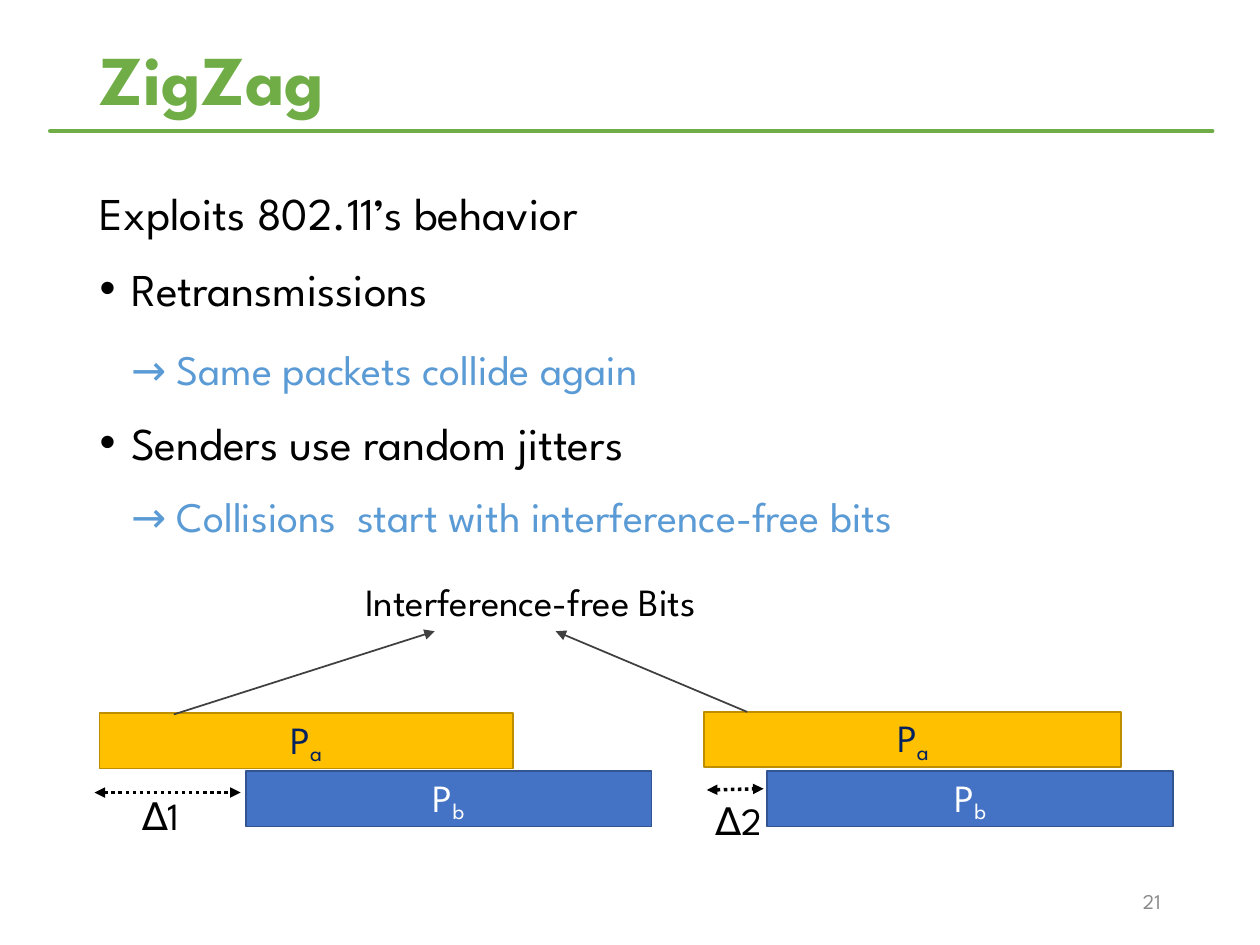
from pptx import Presentation
from pptx.dml.color import RGBColor
from pptx.enum.dml import MSO_LINE
from pptx.enum.shapes import MSO_CONNECTOR, MSO_SHAPE
from pptx.enum.text import MSO_ANCHOR, MSO_AUTO_SIZE, PP_ALIGN
from pptx.oxml.ns import qn
from pptx.util import Inches, Pt
from lxml import etree

STRAIGHT = MSO_CONNECTOR.STRAIGHT
RECTANGLE = MSO_SHAPE.RECTANGLE
DOTTED = MSO_LINE.ROUND_DOT
MIDDLE = MSO_ANCHOR.MIDDLE
TOP = MSO_ANCHOR.TOP
NO_FIT = MSO_AUTO_SIZE.NONE
LEFT, CENTER, RIGHT = PP_ALIGN.LEFT, PP_ALIGN.CENTER, PP_ALIGN.RIGHT

GREEN, SKY, BLACK, GRAY = "70AD47", "5B9BD5", "000000", "404040"


def rgb(value):
    return RGBColor.from_string(value)


class SlideBuilder:
    font_name = "League Spartan"
    label_size = 22

    def __init__(self, slide):
        self.slide = slide

    def style(self, paragraph, size, color, bold=False, align=LEFT):
        paragraph.alignment = align
        font = paragraph.font
        font.name = self.font_name
        font.size = Pt(size)
        font.bold = bold
        font.color.rgb = rgb(color)

    def place(self, shape, left, top, width, height):
        shape.left, shape.top = Inches(left), Inches(top)
        shape.width, shape.height = Inches(width), Inches(height)

    def title(self, text, box):
        title = self.slide.shapes.title
        self.place(title, *box)
        frame = title.text_frame
        frame.text = text
        frame.auto_size = NO_FIT
        frame.vertical_anchor = MIDDLE
        frame.paragraphs[0].line_spacing = 0.9
        self.style(frame.paragraphs[0], 40, GREEN, bold=True)

    def body(self, items, box):
        body = self.slide.placeholders[1]
        self.place(body, *box)
        frame = body.text_frame
        frame.text = "\n".join(item[0] for item in items)
        frame.auto_size = NO_FIT
        for paragraph, (_, size, color, indent, bullet, before) in zip(frame.paragraphs, items):
            self.style(paragraph, size, color)
            paragraph.space_before = Pt(before)
            properties = paragraph._p.get_or_add_pPr()
            properties.set("marL", str(Inches(0.25)))
            properties.set("indent", str(Inches(indent)))
            if bullet:
                etree.SubElement(properties, qn("a:buChar")).set("char", "•")
            else:
                etree.SubElement(properties, qn("a:buNone"))
            properties.append(properties.find(qn("a:defRPr")))

    def label(self, text, box, size=label_size, color=BLACK, align=LEFT, anchor=TOP):
        frame = self.slide.shapes.add_textbox(*map(Inches, box)).text_frame
        frame.word_wrap = True
        frame.vertical_anchor = anchor
        frame.text = text
        self.style(frame.paragraphs[0], size, color, align=align)

    def packet(self, subscript, box, fill, outline, color):
        packet = self.slide.shapes.add_shape(RECTANGLE, *map(Inches, box))
        packet.shadow.inherit = False
        packet.fill.solid()
        packet.fill.fore_color.rgb = rgb(fill)
        packet.line.color.rgb = rgb(outline)
        packet.line.width = Pt(1)
        frame = packet.text_frame
        frame.margin_left = frame.margin_right = frame.margin_top = frame.margin_bottom = 0
        frame.vertical_anchor = MIDDLE
        paragraph = frame.paragraphs[0]
        paragraph.add_run().text = "P"
        lowered = paragraph.add_run()
        lowered.text = subscript
        lowered._r.get_or_add_rPr().set("baseline", "-20000")
        self.style(paragraph, self.label_size, color, align=CENTER)

    def line(self, start, end, color, width, arrows=(), dash=None, cap=None):
        connector = self.slide.shapes.add_connector(STRAIGHT, *map(Inches, start + end))
        connector.line.color.rgb = rgb(color)
        connector.line.width = Pt(width)
        if dash:
            connector.line.dash_style = dash
        properties = connector._element.spPr
        outline = properties.find(qn("a:ln"))
        if cap:
            outline.set("cap", cap)
        for arrow in arrows:
            etree.SubElement(outline, qn(arrow)).set("type", "triangle")
        etree.SubElement(properties, qn("a:effectLst"))


def main():
    presentation = Presentation()
    presentation.slide_width, presentation.slide_height = Inches(10), Inches(7.5)
    builder = SlideBuilder(presentation.slides.add_slide(presentation.slide_layouts[1]))

    builder.line((0.4, 1.04), (9.62, 1.04), GREEN, 2.75, cap="rnd")
    builder.title("ZigZag", (0.69, 0.29, 8.62, 0.74))
    builder.body([
        ("Exploits 802.11’s behavior", 26, BLACK, -0.25, False, 12),
        ("Retransmissions", 26, BLACK, -0.25, True, 12),
        ("→ Same packets collide again", 24, SKY, 0, False, 16),
        ("Senders use random jitters", 26, BLACK, -0.25, True, 12),
        ("→ Collisions  start with interference-free bits", 24, SKY, 0, False, 12),
    ], (0.69, 1.42, 8.62, 5.34))

    both_ends = ("a:headEnd", "a:tailEnd")
    collisions = [
        ("∆1", (1.03, 6.24), (0.75, 6.29), (1.91, 6.29), (0.79, 5.66, 3.28), 1.95),
        ("∆2", (5.58, 6.28), (5.61, 6.27), (6.06, 6.26), (5.59, 5.65, 3.31), 6.09),
    ]
    for delta, corner, start, end, first, second_left in collisions:
        builder.line(start, end, BLACK, 2, both_ends, DOTTED)
        builder.label(delta, corner + (0.83, 0.47))
        builder.packet("a", first + (0.44,), "FFC000", "BD8E00", "002060")
        builder.packet("b", (second_left, 6.12, 3.22, 0.44), "4472C4", "325491", "FFFFFF")

    builder.label("Interference-free Bits", (2.8, 4.54, 3.99, 0.47))
    for start, end in [((1.38, 5.67), (3.45, 5.01)), ((5.93, 5.65), (4.41, 5.01))]:
        builder.line(start, end, GRAY, 1, ("a:tailEnd",))
    builder.label("21", (7.06, 6.95, 2.25, 0.4), 12, "8C8C8C", RIGHT, MIDDLE)

    presentation.save("out.pptx")


if __name__ == "__main__":
    main()
